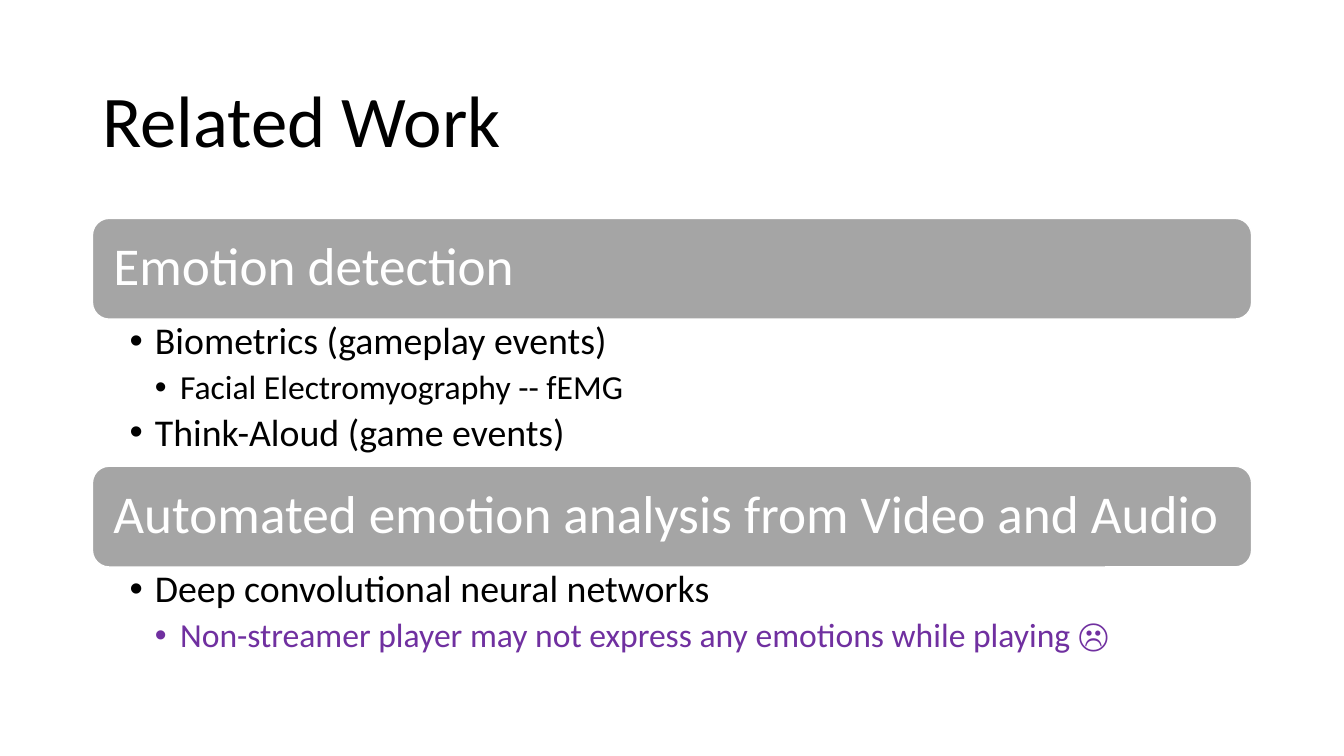
"""Build the Related Work slide: two grey heading bars, each over a bulleted list."""
from dataclasses import dataclass

from lxml.etree import SubElement
from pptx import Presentation
from pptx.dml.color import RGBColor
from pptx.enum.shapes import MSO_SHAPE
from pptx.enum.text import MSO_ANCHOR, PP_ALIGN
from pptx.oxml.ns import qn
from pptx.util import Emu, Inches, Pt

BLACK = RGBColor(0x00, 0x00, 0x00)
WHITE = RGBColor(0xFF, 0xFF, 0xFF)
GREY = RGBColor(0xA5, 0xA5, 0xA5)
PURPLE = RGBColor(0x70, 0x30, 0xA0)

FONT = "Calibri"
WIDTH, HEIGHT = Inches(13.33), Inches(7.5)
COLS, ROWS = 160, 90
LEFT, SPAN = 11, 138
BAR = 12
INDENT = 0.25
SIZES = {1: 27, 2: 24}


@dataclass(frozen=True)
class Item:
    text: str
    level: int = 1
    color: RGBColor = BLACK


@dataclass(frozen=True)
class Section:
    title: str
    rows: float
    items: tuple[Item, ...]


SECTIONS = (
    Section("Emotion detection", 17.5, (
        Item("Biometrics (gameplay events)"),
        Item("Facial Electromyography -- fEMG", 2),
        Item("Think-Aloud (game events)"),
    )),
    Section("Automated emotion analysis from Video and Audio", 11.4, (
        Item("Deep convolutional neural networks"),
        Item("Non-streamer player may not express any emotions while playing ☹", 2, PURPLE),
    )),
)


def place(top: float, rows: float) -> tuple[Emu, Emu, Emu, Emu]:
    return (Emu(int(WIDTH * LEFT / COLS)), Emu(int(HEIGHT * top / ROWS)),
            Emu(int(WIDTH * SPAN / COLS)), Emu(int(HEIGHT * rows / ROWS)))


def set_frame(frame, left: float, top: float, right: float, anchor=MSO_ANCHOR.MIDDLE) -> None:
    frame.word_wrap = True
    frame.vertical_anchor = anchor
    frame.margin_left, frame.margin_right = Inches(left), Inches(right)
    frame.margin_top = frame.margin_bottom = Inches(top)


def write(para, text: str, *, size: float, color: RGBColor = BLACK,
          after: float = 0, level: int = 0) -> None:
    para.alignment = PP_ALIGN.LEFT
    para.line_spacing = 0.9
    para.space_after = Pt(size * after)
    run = para.add_run()
    run.text = text
    run.font.name = FONT
    run.font.size = Pt(size)
    run.font.color.rgb = color
    if level:
        para.level = level
        props = para._p.get_or_add_pPr()
        props.set("marL", str(Inches(INDENT * level)))
        props.set("indent", str(-Inches(INDENT)))
        SubElement(props, qn("a:buFont")).set("typeface", "Arial")
        SubElement(props, qn("a:buChar")).set("char", "•")


def draw_title(slide, text: str) -> None:
    frame = slide.shapes.add_textbox(*place(7.3, 14.9)).text_frame
    set_frame(frame, 0.1, 0.05, 0.1)
    write(frame.paragraphs[0], text, size=52)


def draw_bar(slide, text: str, top: float) -> None:
    bar = slide.shapes.add_shape(MSO_SHAPE.ROUNDED_RECTANGLE, *place(top, BAR))
    bar.shadow.inherit = False
    bar.fill.solid()
    bar.fill.fore_color.rgb = GREY
    bar.line.color.rgb = WHITE
    bar.line.width = Pt(1)
    set_frame(bar.text_frame, 0.16, 0.16, 0.16)
    write(bar.text_frame.paragraphs[0], text, size=38, color=WHITE)


def draw_list(slide, items: tuple[Item, ...], top: float, rows: float) -> None:
    frame = slide.shapes.add_textbox(*place(top, rows)).text_frame
    set_frame(frame, 0.37, 0.03, 0.19, MSO_ANCHOR.TOP)
    for index, item in enumerate(items):
        para = frame.add_paragraph() if index else frame.paragraphs[0]
        write(para, item.text, size=SIZES[item.level], color=item.color,
              after=0.2, level=item.level)


def main() -> None:
    deck = Presentation()
    deck.slide_width, deck.slide_height = WIDTH, HEIGHT
    slide = deck.slides.add_slide(deck.slide_layouts[6])
    draw_title(slide, "Related Work")
    top = 26
    for part in SECTIONS:
        draw_bar(slide, part.title, top)
        draw_list(slide, part.items, top + BAR, part.rows)
        top += BAR + part.rows
    deck.save("out.pptx")


if __name__ == "__main__":
    main()
